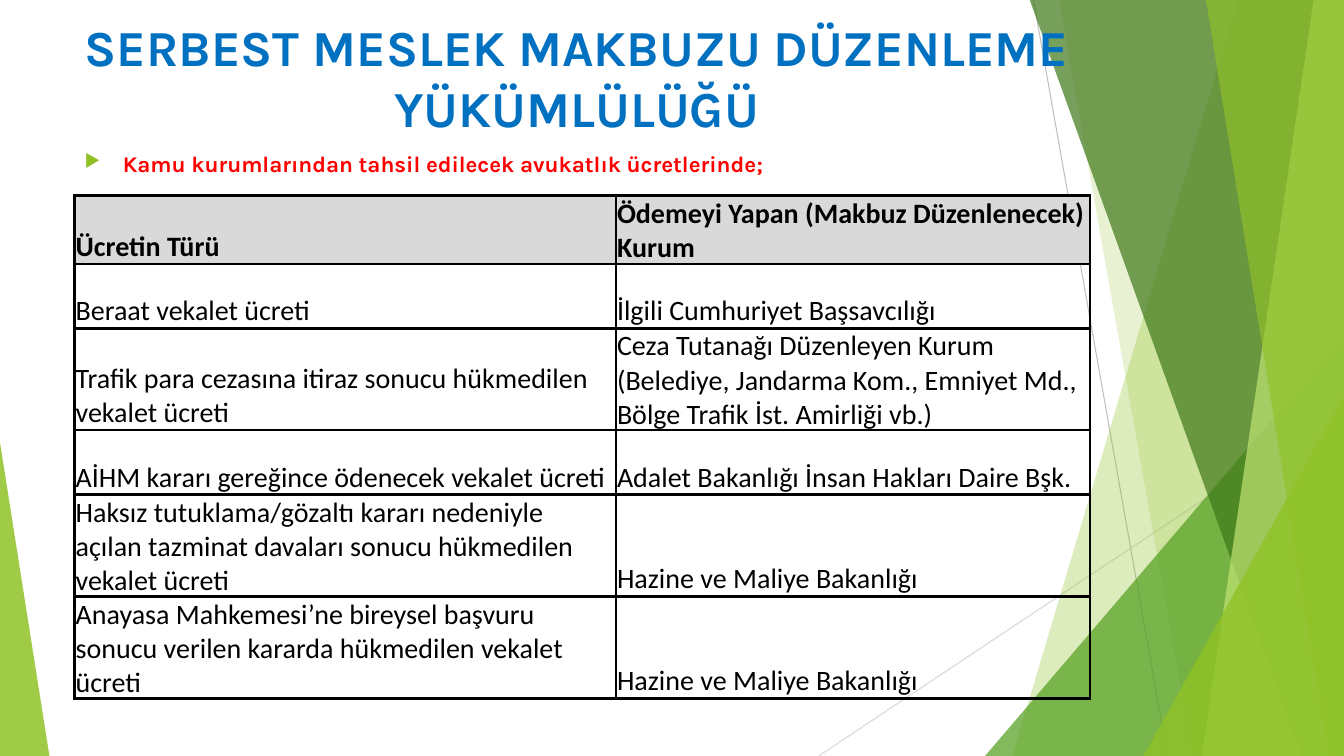
from lxml import etree
from pptx import Presentation
from pptx import util as u
from pptx.dml.color import RGBColor
from pptx.enum import shapes, text
from pptx.oxml import ns

GREEN = "90C226"


def tint(code):
    return RGBColor.from_string(code)


def add(node, tag, **attrs):
    return etree.SubElement(node, ns.qn(tag), {k: str(v) for k, v in attrs.items()})


class Deck:
    """Holds the style and the current slide."""

    def __init__(self):
        self.prs = Presentation()
        self.prs.slide_width, self.prs.slide_height = u.Inches(13.33), u.Inches(7.5)
        self.slide = self.prs.slides.add_slide(self.prs.slide_layouts[6])
        self.items = self.slide.shapes

    def line(self, start, end, color):
        ends = [u.Inches(v) for v in start + end]
        rule = self.items.add_connector(shapes.MSO_CONNECTOR.STRAIGHT, *ends)
        rule.line.color.rgb = tint(color)
        rule.line.width = u.Pt(0.75)
        add(rule.element.spPr, "a:effectLst")

    def paint(self, shape, color, alpha):
        shape.shadow.inherit = False
        shape.fill.solid()
        shape.fill.fore_color.rgb = tint(color)
        shape.line.fill.background()
        shade = shape.element.spPr.find(".//" + ns.qn("a:srgbClr"))
        add(shade, "a:alpha", val=alpha * 1000)

    def band(self, top, foot, color, alpha):
        spots = [(top, -0.01), (13.33, -0.01), (13.33, 7.5), (foot, 7.5)]
        first, *rest = [(u.Inches(x), u.Inches(y)) for x, y in spots]
        path = self.items.build_freeform(*first)
        path.add_line_segments(rest)
        self.paint(path.convert_to_shape(), color, alpha)

    def wedge(self, box, peak, color, alpha):
        kind = shapes.MSO_SHAPE.ISOSCELES_TRIANGLE
        shape = self.items.add_shape(kind, *map(u.Inches, box))
        shape.adjustments[0] = peak
        self.paint(shape, color, alpha)

    def run(self, para, words, size, color, bold, face):
        run = para.add_run()
        run.text = words
        font = run.font
        font.size, font.bold, font.name = u.Pt(size), bold, face
        font.color.rgb = tint(color)

    def text(self, box, words, size, color, anchor):
        frame = self.items.add_textbox(*map(u.Inches, box)).text_frame
        frame.word_wrap = True
        frame.vertical_anchor = anchor
        para = frame.paragraphs[0]
        self.run(para, words, size, color, True, "Karla")
        return para

    def bullet(self, para):
        props = para._p.get_or_add_pPr()
        props.set("marL", str(u.Inches(0.38)))
        props.set("indent", str(-u.Inches(0.38)))
        add(add(props, "a:buClr"), "a:srgbClr", val=GREEN)
        add(props, "a:buSzPct", val=80000)
        add(props, "a:buChar", char="▶")

    def cell(self, cell, words, head):
        cell.margin_left = cell.margin_right = cell.margin_top = u.Inches(0.01)
        cell.margin_bottom = 0
        cell.vertical_anchor = text.MSO_ANCHOR.BOTTOM
        self.run(cell.text_frame.paragraphs[0], words, 20, "000000", head, "Calibri")
        props = cell._tc.get_or_add_tcPr()
        for side in "LRTB":
            edge = add(props, f"a:ln{side}", w=u.Pt(2))
            add(add(edge, "a:solidFill"), "a:srgbClr", val="000000")
        if head:
            cell.fill.solid()
            cell.fill.fore_color.rgb = tint("D9D9D9")
        else:
            cell.fill.background()

    def table(self, box, rows, widths, heights):
        size = len(rows), len(widths)
        grid = self.items.add_table(*size, *map(u.Inches, box)).table
        grid.first_row = grid.horz_banding = False
        for col, width in zip(grid.columns, widths):
            col.width = u.Inches(width)
        for r, (row, height) in enumerate(zip(rows, heights)):
            grid.rows[r].height = u.Inches(height)
            for c, words in enumerate(row):
                self.cell(grid.cell(r, c), words, r == 0)


FEES = [
    ("Ücretin Türü", "Ödemeyi Yapan (Makbuz Düzenlenecek) Kurum"),
    ("Beraat vekalet ücreti", "İlgili Cumhuriyet Başsavcılığı"),
    ("Trafik para cezasına itiraz sonucu hükmedilen vekalet ücreti",
     "Ceza Tutanağı Düzenleyen Kurum (Belediye, Jandarma Kom., Emniyet Md., "
     "Bölge Trafik İst. Amirliği vb.)"),
    ("AİHM kararı gereğince ödenecek vekalet ücreti",
     "Adalet Bakanlığı İnsan Hakları Daire Bşk."),
    ("Haksız tutuklama/gözaltı kararı nedeniyle açılan tazminat davaları "
     "sonucu hükmedilen vekalet ücreti", "Hazine ve Maliye Bakanlığı"),
    ("Anayasa Mahkemesi’ne bireysel başvuru sonucu verilen kararda "
     "hükmedilen vekalet ücreti", "Hazine ve Maliye Bakanlığı"),
]


def main():
    deck = Deck()
    deck.line((10.25, 0), (11.58, 7.5), "BFBFBF")
    deck.line((13.33, 4.03), (8.12, 7.5), "D9D9D9")
    deck.band(12.28, 10.04, GREEN, 30)
    deck.band(10.5, 11.83, GREEN, 20)
    deck.wedge((9.77, 3.33, 3.56, 4.17), 1, "54A021", 72)
    deck.band(10.21, 12.91, "3F7819", 70)
    deck.band(13.03, 11.92, "C0E474", 70)
    deck.band(11.96, 13.18, GREEN, 65)
    deck.wedge((11.34, 3.93, 1.99, 3.57), 1, GREEN, 80)
    deck.wedge((0, 4.39, 0.49, 3.11), 0, GREEN, 85)

    title = deck.text((0.74, 0.1, 9.96, 1.33),
                      "SERBEST MESLEK MAKBUZU DÜZENLEME YÜKÜMLÜLÜĞÜ",
                      36, "0070C0", text.MSO_ANCHOR.MIDDLE)
    title.alignment = text.PP_ALIGN.CENTER
    lead = deck.text((0.74, 1.44, 9.4, 5.92),
                     "Kamu kurumlarından tahsil edilecek avukatlık ücretlerinde;",
                     16, "FF0000", text.MSO_ANCHOR.TOP)
    deck.bullet(lead)
    deck.table((0.74, 1.94, 10.06, 4.99), FEES, (5.37, 4.7),
               (0.64, 0.64, 0.8, 0.64, 0.64, 0.64))
    deck.prs.save("out.pptx")


if __name__ == "__main__":
    main()
